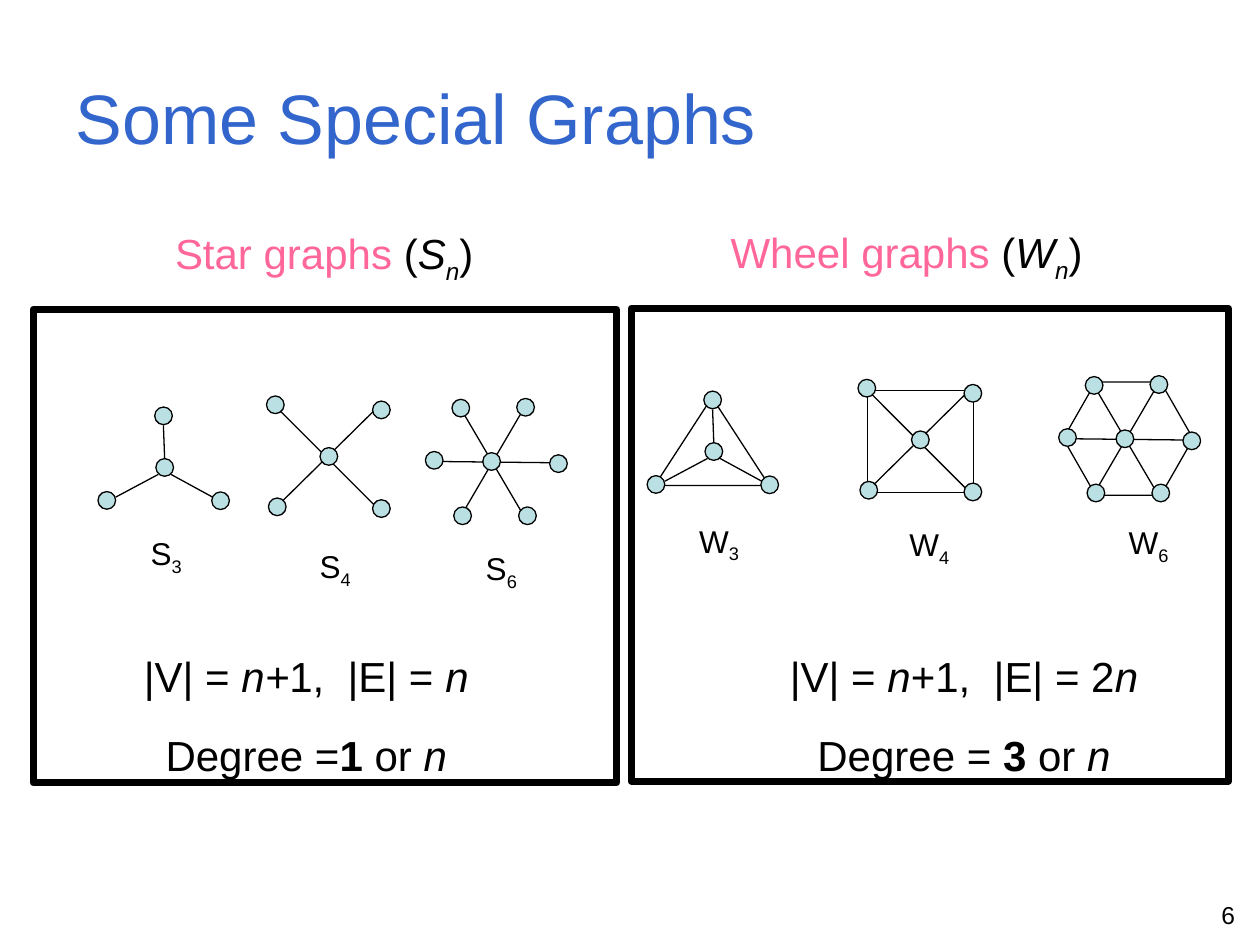
from dataclasses import dataclass
from typing import NamedTuple

from lxml import etree
from pptx import Presentation
from pptx.dml.color import RGBColor
from pptx.enum.shapes import MSO_CONNECTOR, MSO_SHAPE
from pptx.enum.text import MSO_ANCHOR, MSO_AUTO_SIZE, PP_ALIGN
from pptx.oxml.ns import qn
from pptx.util import Pt

LEFT, CENTER, RIGHT = PP_ALIGN.LEFT, PP_ALIGN.CENTER, PP_ALIGN.RIGHT
RECT, OVAL = MSO_SHAPE.RECTANGLE, MSO_SHAPE.OVAL
TRIANGLE, HEXAGON = MSO_SHAPE.ISOSCELES_TRIANGLE, MSO_SHAPE.HEXAGON
STRAIGHT = MSO_CONNECTOR.STRAIGHT


@dataclass(frozen=True)
class Theme:
    font: str = "Arial"
    title: RGBColor = RGBColor(0x33, 0x66, 0xCC)
    accent: RGBColor = RGBColor(0xFF, 0x66, 0x99)
    ink: RGBColor = RGBColor(0, 0, 0)
    vertex: RGBColor = RGBColor(0xBB, 0xE0, 0xE3)
    title_size: float = 40
    body_size: float = 24
    label_size: float = 18
    number_size: float = 14
    thin: float = 0.75
    frame: float = 4


THEME = Theme()
DOT = 10.1


class Box(NamedTuple):
    x: float
    y: float
    w: float
    h: float


class Run(NamedTuple):
    text: str
    italic: bool = False
    bold: bool = False
    sub: bool = False
    color: RGBColor | None = None


class Pattern(NamedTuple):
    """Geometry measured from the top left of the hub vertex."""
    vertices: list[tuple[float, float]]
    spokes: list[tuple[float, float, float, float]]
    rim: Box
    rim_shape: MSO_SHAPE


class Graph(NamedTuple):
    n: int
    hub: tuple[float, float]
    label: Box


@dataclass(frozen=True)
class Panel:
    name: str
    symbol: str
    heading: Box
    heading_indent: float
    graphs: list[Graph]
    rimmed: bool
    label_align: PP_ALIGN
    formula: Box
    wrap_formula: bool
    formula_runs: list[list[Run]]
    frame: Box


PATTERNS = {
    3: Pattern([(-0.7, -29.5), (31.9, 19), (-33.1, 18.8)],
               [(4.3, -19, 5, 0), (-23, 22, 1.4, 9), (37, 24.5, 8.6, 9)],
               Box(-28.8, -25.9, 65.5, 50.4), TRIANGLE),
    4: Pattern([(-30.6, -29.5), (-29.5, 28.8), (30, 29.8), (30, -26.6)],
               [(-25.6, -23.8, 33.8, 35.6), (33.8, -24, -26.6, 35.6)],
               Box(-25.2, -23, 60.5, 58.3), RECT),
    6: Pattern([(-17.6, -30.5), (-32.8, -0.7), (-16.6, 31), (19.4, -31), (38.2, 1.2), (20.5, 31)],
               [(-28, 5, 44.3, 5.8), (-12.6, -25.2, 23.4, 36), (23.4, -25.2, -12.6, 36.4)],
               Box(-30.2, -27.4, 74.2, 64.8), HEXAGON),
}

STARS = Panel(
    "Star graphs ", "S", Box(65.5, 126.7, 252.7, 62), 27.4,
    [Graph(3, (89.1, 262.1), Box(78.5, 301.7, 33, 29)),
     Graph(4, (182.9, 255.8), Box(175, 308.9, 33, 29)),
     Graph(6, (275.9, 258.7), Box(270, 310.3, 33, 29))],
    False, CENTER, Box(74.2, 368, 201.6, 80), False,
    [[Run("|V| = "), Run("n+", italic=True), Run("1,  |E| = "), Run("n", italic=True)],
     [Run("Degree ="), Run("1", bold=True), Run(" or "), Run("n", italic=True)]],
    Box(18.9, 176.8, 333.4, 270.5))

WHEELS = Panel(
    "Wheel graphs ", "W", Box(410.4, 126, 226.8, 55.4), 0,
    [Graph(3, (402.9, 253), Box(392.4, 294.5, 49.7, 29)),
     Graph(4, (520.9, 246.3), Box(512.6, 296.6, 49.7, 29)),
     Graph(6, (637.8, 245.7), Box(637.9, 295.2, 49.7, 29))],
    True, LEFT, Box(421.9, 368.3, 257.8, 80), True,
    [[Run("|V| = "), Run("n", italic=True), Run("+1,  |E| = 2"), Run("n", italic=True)],
     [Run("Degree = "), Run("3", bold=True), Run(" or "), Run("n", italic=True)]],
    Box(360.7, 176.2, 341.3, 270.2))


def points(values) -> list[Pt]:
    return [Pt(v) for v in values]


def write(p, runs: list[Run], size: float, align: PP_ALIGN = LEFT,
          color: RGBColor = THEME.ink) -> None:
    p.alignment = align
    p.font.name, p.font.size = THEME.font, Pt(size)
    p.font.color.rgb = color
    for run in runs:
        r = p.add_run()
        r.text = run.text
        if run.italic:
            r.font.italic = True
        if run.bold:
            r.font.bold = True
        if run.color:
            r.font.color.rgb = run.color
        if run.sub:
            r.font._element.set("baseline", "-25000")


def add_text(shapes, box: Box, lines: list[list[Run]], size: float,
             align: PP_ALIGN = LEFT, wrap: bool = True):
    tf = shapes.add_textbox(*points(box)).text_frame
    tf.word_wrap = wrap
    for i, runs in enumerate(lines):
        write(tf.add_paragraph() if i else tf.paragraphs[0], runs, size, align)
    return tf


def add_outline(shapes, kind: MSO_SHAPE, box: Box, width: float,
                fill: RGBColor | None = None):
    sp = shapes.add_shape(kind, *points(box))
    sp.shadow.inherit = False
    sp.line.color.rgb, sp.line.width = THEME.ink, Pt(width)
    if fill is None:
        sp.fill.background()
    else:
        sp.fill.solid()
        sp.fill.fore_color.rgb = fill
    return sp


def add_graph(shapes, graph: Graph, rimmed: bool) -> None:
    x, y = graph.hub
    pattern = PATTERNS[graph.n]
    if rimmed:
        dx, dy, w, h = pattern.rim
        rim = add_outline(shapes, pattern.rim_shape, Box(x + dx, y + dy, w, h), THEME.thin)
        if pattern.rim_shape == HEXAGON:
            rim.adjustments[0] = 0.286
    for x1, y1, x2, y2 in pattern.spokes:
        line = shapes.add_connector(STRAIGHT, *points((x + x1, y + y1, x + x2, y + y2)))
        line.line.color.rgb, line.line.width = THEME.ink, Pt(THEME.thin)
        etree.SubElement(line._element.spPr, qn("a:effectLst"))
    for dx, dy in [(0, 0), *pattern.vertices]:
        add_outline(shapes, OVAL, Box(x + dx, y + dy, DOT, DOT), THEME.thin, THEME.vertex)


def add_panel(s, panel: Panel) -> None:
    heading = [Run(panel.name, color=THEME.accent), Run("("), Run(panel.symbol, italic=True),
               Run("n", italic=True, sub=True), Run(")")]
    tf = add_text(s.shapes, panel.heading, [heading], THEME.body_size)
    tf.paragraphs[0]._p.get_or_add_pPr().set("marL", str(Pt(panel.heading_indent)))
    group = s.shapes.add_group_shape().shapes
    for graph in panel.graphs:
        add_graph(group, graph, panel.rimmed)
        add_text(group, graph.label, [[Run(panel.symbol), Run(str(graph.n), sub=True)]],
                 THEME.label_size, panel.label_align, wrap=panel.rimmed)
    tf = add_text(s.shapes, panel.formula, panel.formula_runs, THEME.body_size, CENTER,
                  panel.wrap_formula)
    tf.paragraphs[1].line_spacing = 1.5
    tf.paragraphs[1].space_before = Pt(2)
    add_outline(s.shapes, RECT, panel.frame, THEME.frame)


def add_title(s, text: str) -> None:
    sp = s.shapes.title
    sp.left, sp.top, sp.width, sp.height = points((36, 21.6, 648, 90))
    tf = sp.text_frame
    tf.vertical_anchor, tf.auto_size = MSO_ANCHOR.MIDDLE, MSO_AUTO_SIZE.NONE
    write(tf.paragraphs[0], [Run(text)], THEME.title_size, color=THEME.title)


def main() -> None:
    prs = Presentation()
    prs.slide_width, prs.slide_height = Pt(720), Pt(540)
    s = prs.slides.add_slide(prs.slide_layouts[5])
    add_title(s, "Some Special Graphs")
    for panel in (WHEELS, STARS):
        add_panel(s, panel)
    add_text(s.shapes, Box(545, 510.5, 167.8, 22.3), [[Run("6")]], THEME.number_size, RIGHT)
    prs.save("out.pptx")


if __name__ == "__main__":
    main()
